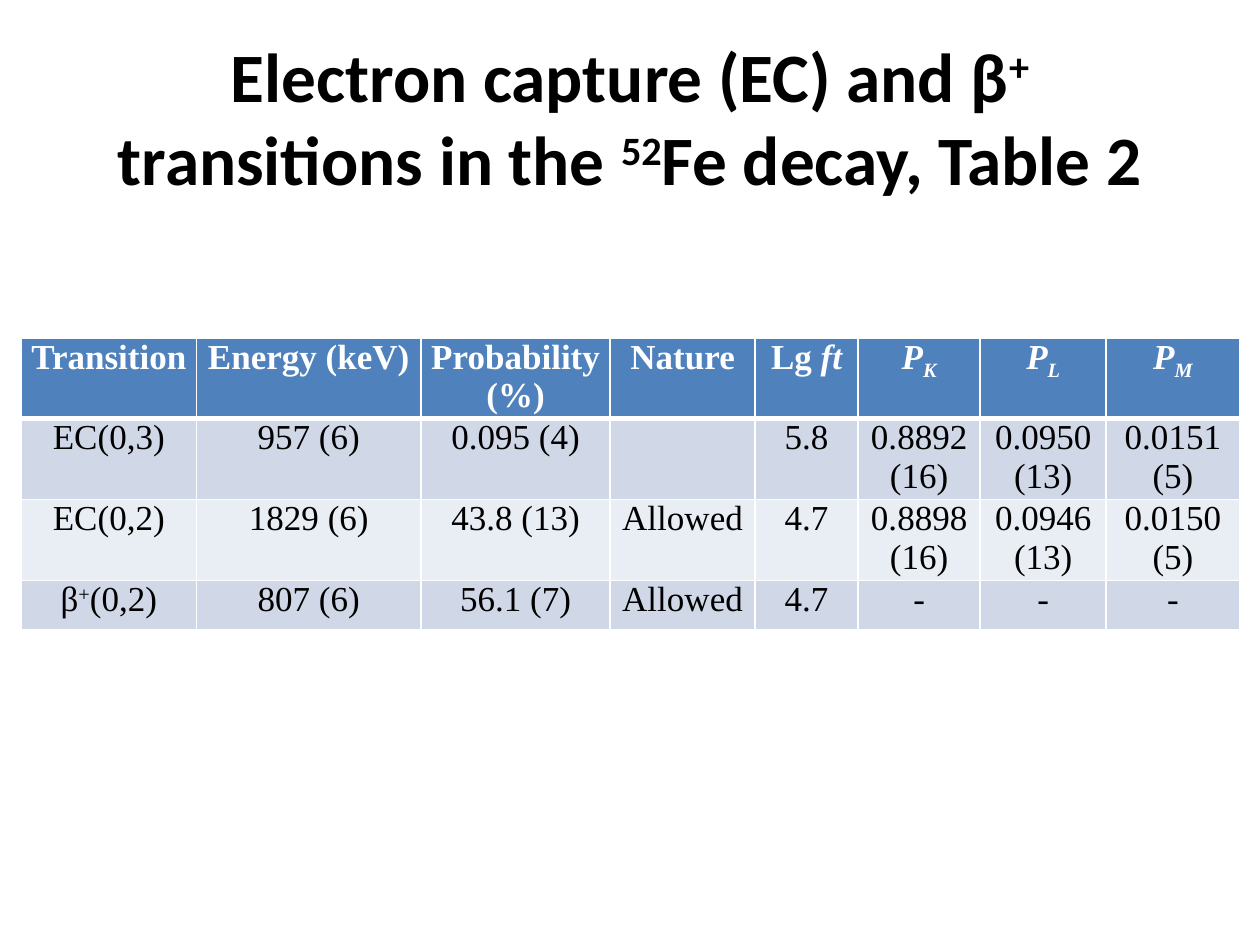
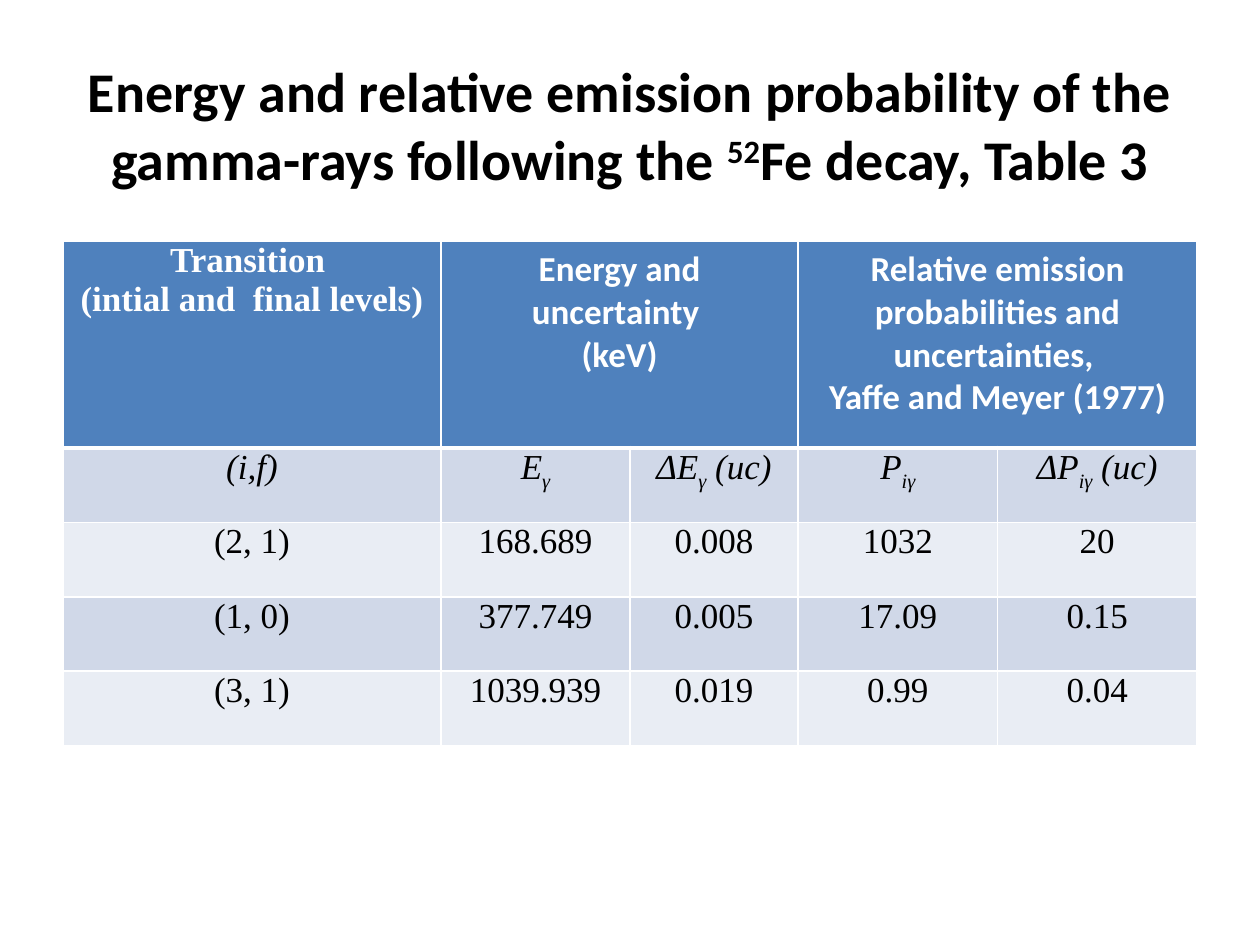
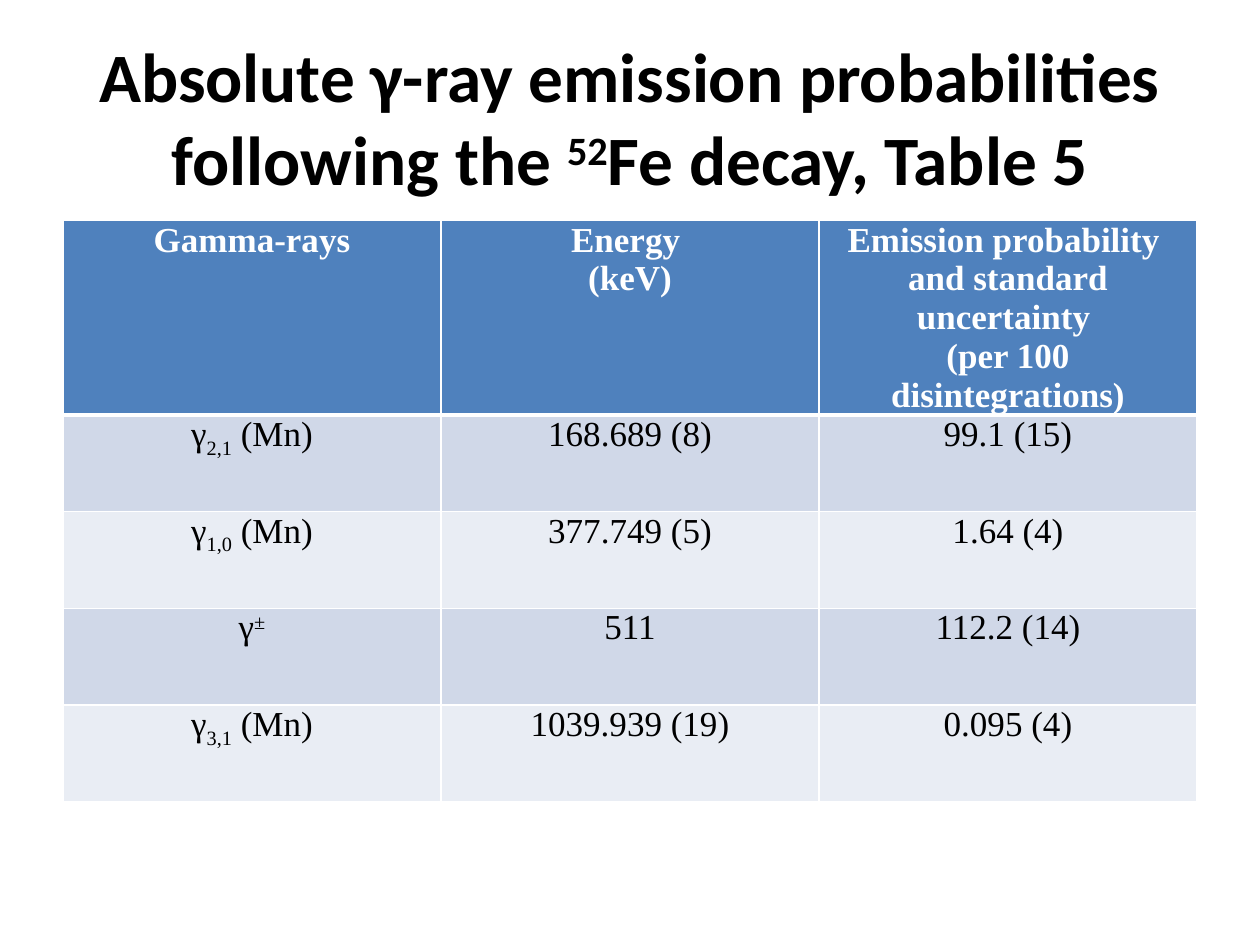
from dataclasses import dataclass

from lxml.etree import SubElement
from pptx import Presentation
from pptx.dml.color import RGBColor
from pptx.enum.text import MSO_ANCHOR as Anchor, MSO_AUTO_SIZE as AutoSize, PP_ALIGN as Align
from pptx.oxml.ns import qn
from pptx.util import Cm, Pt

COLORS = {
    "ink": "000000",
    "paper": "FFFFFF",
    "header": "4F81BD",
    "band_dark": "D0D8E8",
    "band_light": "E9EDF4",
}
SANS, SERIF = "Calibri", "Times New Roman"
SUPER, SUB = 30000, -25000
TABLE_SIZE = 20
THIN, THICK = 1, 3


@dataclass(frozen=True)
class Run:
    text: str
    baseline: int = 0
    italic: bool = False


@dataclass(frozen=True)
class Style:
    font: str
    size: float
    color: str
    bold: bool


@dataclass(frozen=True)
class Entry:
    lines: tuple[tuple[Run, ...], ...]
    span: int = 1
    font: str = SERIF
    margins: tuple[float, float] = (0.18, 0)


@dataclass(frozen=True)
class DecayTable:
    title: tuple[Run, ...]
    title_size: float
    title_height: float
    left: float
    top: float
    widths: tuple[float, ...]
    heights: tuple[float, ...]
    header: tuple[Entry, ...]
    body: tuple[tuple[Entry, ...], ...]


def entry(*runs: Run) -> Entry:
    return Entry((runs,))


def plain(*texts: str) -> tuple[Entry, ...]:
    return tuple(entry(Run(text)) if text else Entry(()) for text in texts)


def stacked(*texts: str) -> Entry:
    return Entry(tuple((Run(text),) for text in texts))


def paired(*texts: str) -> Entry:
    return Entry(stacked(*texts).lines, span=2, font=SANS, margins=(0.25, 0.13))


def indexed(symbol: str, index: str, tail: str = "", italic: bool = False) -> Entry:
    runs = [Run(symbol, 0, italic), Run(index, SUB, italic)]
    return entry(*runs, *([Run(tail, 0, italic)] if tail else []))


def iron_title(before: tuple[Run, ...], after: str) -> tuple[Run, ...]:
    return (*before, Run("52", SUPER), Run(after))


def write_lines(frame, lines: tuple[tuple[Run, ...], ...], style: Style) -> None:
    for number, line in enumerate(lines):
        paragraph = frame.add_paragraph() if number else frame.paragraphs[0]
        paragraph.alignment = Align.CENTER
        for piece in line:
            run = paragraph.add_run()
            run.text = piece.text
            run.font.name = style.font
            run.font.size = Pt(style.size)
            run.font.bold = style.bold
            run.font.italic = piece.italic
            run.font.color.rgb = RGBColor.from_string(COLORS[style.color])
            if piece.baseline:
                run._r.get_or_add_rPr().set("baseline", str(piece.baseline))


def draw_borders(cell, top: int, bottom: int) -> None:
    properties = cell._tc.get_or_add_tcPr()
    sides = {"a:lnL": THIN, "a:lnR": THIN, "a:lnT": top, "a:lnB": bottom}
    for position, (side, width) in enumerate(sides.items()):
        line = SubElement(properties, qn(side), w=str(Pt(width)))
        fill = SubElement(line, qn("a:solidFill"))
        SubElement(fill, qn("a:srgbClr"), val=COLORS["paper"])
        properties.insert(position, line)


def fill_row(table, row: int, entries: tuple[Entry, ...]) -> None:
    is_header = row == 0
    band = "header" if is_header else "band_dark" if row % 2 else "band_light"
    for cell in table.rows[row].cells:
        cell.fill.solid()
        cell.fill.fore_color.rgb = RGBColor.from_string(COLORS[band])
        draw_borders(cell, THICK if row == 1 else THIN, THICK if is_header else THIN)
    column = 0
    for item in entries:
        cell = table.cell(row, column)
        if item.span > 1:
            cell.merge(table.cell(row, column + item.span - 1))
        side, edge = item.margins
        cell.margin_left = cell.margin_right = Cm(side)
        cell.margin_top = cell.margin_bottom = Cm(edge)
        style = Style(item.font, TABLE_SIZE, "paper" if is_header else "ink", is_header)
        write_lines(cell.text_frame, item.lines, style)
        column += item.span


def add_decay_slide(deck, content: DecayTable) -> None:
    slide = deck.slides.add_slide(deck.slide_layouts[5])
    title = slide.shapes.title
    title.left, title.top = Cm(1.27), Cm(0.76)
    title.width, title.height = Cm(22.86), Cm(content.title_height)
    title.text_frame.auto_size = AutoSize.NONE
    title.text_frame.vertical_anchor = Anchor.MIDDLE
    write_lines(title.text_frame, (content.title,), Style(SANS, content.title_size, "ink", True))

    table = slide.shapes.add_table(
        len(content.heights), len(content.widths), Cm(content.left), Cm(content.top),
        Cm(sum(content.widths)), Cm(sum(content.heights)),
    ).table
    for column, width in zip(table.columns, content.widths):
        column.width = Cm(width)
    for row, height in zip(table.rows, content.heights):
        row.height = Cm(height)
    for number, entries in enumerate((content.header, *content.body)):
        fill_row(table, number, entries)


TRANSITIONS = DecayTable(
    title=iron_title(
        (Run("Electron capture (EC) and β"), Run("+", SUPER), Run(" transitions in the ")),
        "Fe decay, Table 2",
    ),
    title_size=39.6,
    title_height=3.18,
    left=0.43,
    top=6.81,
    widths=(3.53, 4.53, 3.81, 2.92, 2.08, 2.46, 2.54, 2.69),
    heights=(1.63, 1.63, 1.63, 0.99),
    header=(
        *plain("Transition", "Energy (keV)", "Probability (%)", "Nature"),
        entry(Run("Lg "), Run("ft", italic=True)),
        *(indexed("P", shell, italic=True) for shell in "KLM"),
    ),
    body=(
        plain("EC(0,3)", "957 (6)", "0.095 (4)", "", "5.8",
              "0.8892 (16)", "0.0950 (13)", "0.0151 (5)"),
        plain("EC(0,2)", "1829 (6)", "43.8 (13)", "Allowed", "4.7",
              "0.8898 (16)", "0.0946 (13)", "0.0150 (5)"),
        (entry(Run("β"), Run("+", SUPER), Run("(0,2)")),
         *plain("807 (6)", "56.1 (7)", "Allowed", "4.7", "-", "-", "-")),
    ),
)

RELATIVE_EMISSION = DecayTable(
    title=iron_title(
        (Run("Energy and relative emission probability of the gamma-rays following the "),),
        "Fe decay, Table 3",
    ),
    title_size=32,
    title_height=3.48,
    left=1.27,
    top=4.87,
    widths=(7.62, 3.81, 3.39, 4.02, 4.02),
    heights=(4.16, *[1.5] * 4),
    header=(
        stacked("Transition ", "(intial and  final levels)"),
        paired("Energy and uncertainty ", "(keV)"),
        paired("Relative emission probabilities and uncertainties, ", "Yaffe and Meyer (1977)"),
    ),
    body=(
        (entry(Run("(i,f)", italic=True)),
         indexed("E", "γ", italic=True),
         indexed("ΔE", "γ", " (uc)", italic=True),
         indexed("P", "iγ", italic=True),
         indexed("ΔP", "iγ", " (uc)", italic=True)),
        plain("(2, 1)", "168.689", "0.008", "1032", "20"),
        plain("(1, 0)", "377.749", "0.005", "17.09", "0.15"),
        plain("(3, 1)", "1039.939", "0.019", "0.99", "0.04"),
    ),
)

ABSOLUTE_EMISSION = DecayTable(
    title=iron_title(
        (Run("Absolute γ-ray emission probabilities following the "),),
        "Fe decay, Table 5",
    ),
    title_size=39.6,
    title_height=3.18,
    left=1.27,
    top=4.45,
    widths=(7.62,) * 3,
    heights=(3.9, *[1.95] * 4),
    header=(
        *plain("Gamma-rays"),
        stacked("Energy ", "(keV)"),
        stacked("Emission probability  and standard uncertainty ", "(per 100 disintegrations)"),
    ),
    body=(
        (indexed("γ", "2,1", " (Mn)"), *plain("168.689 (8)", "99.1 (15)")),
        (indexed("γ", "1,0", " (Mn)"), *plain("377.749 (5)", "1.64 (4)")),
        (entry(Run("γ"), Run("±", SUPER)), *plain("511", "112.2 (14)")),
        (indexed("γ", "3,1", " (Mn)"), *plain("1039.939 (19)", "0.095 (4)")),
    ),
)


def main() -> None:
    deck = Presentation()
    deck.slide_width, deck.slide_height = Cm(25.4), Cm(19.05)
    for content in (TRANSITIONS, RELATIVE_EMISSION, ABSOLUTE_EMISSION):
        add_decay_slide(deck, content)
    deck.save("out.pptx")


if __name__ == "__main__":
    main()
